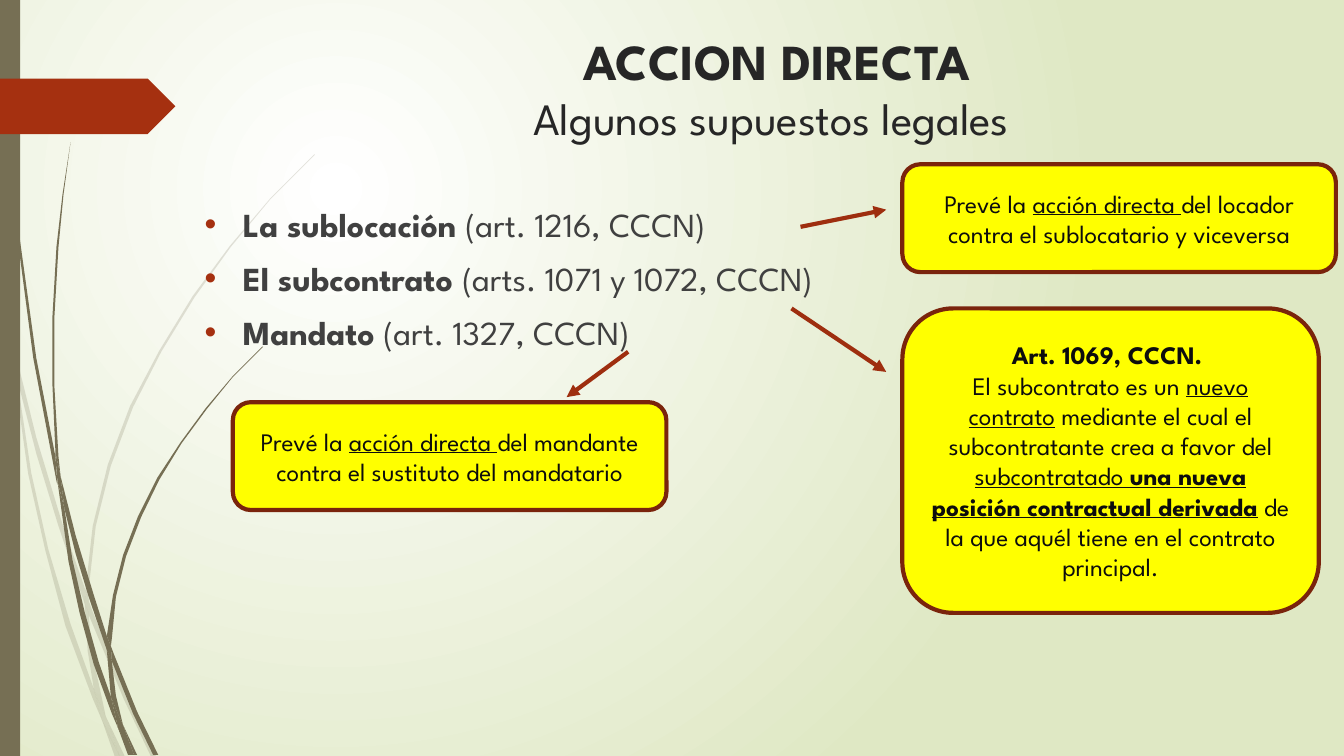
from dataclasses import dataclass

from lxml.etree import SubElement
from pptx import Presentation
from pptx.dml.color import RGBColor
from pptx.enum.shapes import MSO_CONNECTOR as Connector, MSO_SHAPE as Shape
from pptx.enum.text import MSO_ANCHOR as Anchor, PP_ALIGN as Align
from pptx.oxml.ns import qn
from pptx.util import Inches, Pt


@dataclass(frozen=True)
class Theme:
    font: str = "League Spartan"
    olive: str = "766F54"
    accent: str = "A53010"
    arrow: str = "9E2E0F"
    box_fill: str = "FFFF00"
    box_line: str = "7A240C"
    title: str = "262626"
    body: str = "404040"
    box_text: str = "0D0D0D"
    glow: str = "FFFFFF"
    backdrop: str = "DFE8C4"
    title_size: int = 36
    subtitle_size: int = 32
    body_size: int = 24
    box_size: int = 18
    stroke: int = 3


THEME = Theme()

# Outlines of the grass blades, in inches.
PALE_BLADES = [
    [(0.11, 3.5), (0.09, 3.22), (0, 2.82), (0, 2.99), (0.1, 3.44)],
    [(0.58, 5.22), (0.84, 5.99), (0.85, 5.86), (0.62, 5.2), (0.36, 4.34), (0.14, 3.45), (0.17, 3.76), (0.36, 4.5)],
    [(0.92, 6.07), (0.88, 5.96), (0.88, 6.1), (1.23, 6.94), (1.5, 7.51), (1.55, 7.51), (1.27, 6.92)],
    [(1.19, 7.51), (1.24, 7.51), (1.05, 7.11)],
    [(0.93, 6.83), (0.7, 6.19), (0.48, 5.45), (0.31, 4.69), (0.17, 3.76), (0.11, 3.5), (0.28, 4.7),
     (0.45, 5.46), (0.65, 6.21), (0.92, 6.93), (1.01, 7.14), (0.99, 7.07)],
    [(0.84, 5.99), (0.87, 6.46), (0.93, 6.83), (0.96, 6.92), (1.05, 7.11), (0.91, 6.46), (0.88, 6.1), (0.88, 6.08)],
    [(0.88, 5.84), (0.95, 5.22), (1.1, 4.62), (1.32, 4.04), (1.6, 3.49), (1.93, 2.95), (2.29, 2.45), (2.68, 1.98),
     (3.12, 1.54), (3.12, 1.53), (2.68, 1.97), (2.28, 2.44), (1.91, 2.94), (1.58, 3.48), (1.29, 4.03), (1.07, 4.61),
     (0.92, 5.22), (0.85, 5.84), (0.85, 5.86), (0.88, 5.96)],
    [(1.01, 7.14), (1.14, 7.51), (1.19, 7.51)],
    [(0.88, 6.08), (0.88, 6.1), (0.88, 5.96), (0.85, 5.86), (0.84, 5.99)],
    [(0.96, 6.92), (0.93, 6.83), (0.99, 7.07), (1.01, 7.14), (1.19, 7.51), (1.05, 7.11)],
]
DARK_BLADES = [
    [(0.07, 1.1), (0.17, 2.33), (0.33, 3.55), (0.56, 4.77), (0.57, 4.81), (0.55, 4.53), (0.36, 3.55), (0.19, 2.32),
     (0.08, 1.09), (0.05, 0.48), (0.04, 0), (0.03, 0), (0.04, 0.48)],
    [(0.88, 5.92), (1.06, 6.45), (1.06, 6.31), (0.93, 5.9), (0.75, 5.31), (0.6, 4.72), (0.64, 5.05), (0.75, 5.49)],
    [(1.13, 6.49), (1.1, 6.41), (1.11, 6.56), (1.32, 7.08), (1.52, 7.49), (1.57, 7.49), (1.36, 7.06)],
    [(1.1, 6.91), (0.98, 6.57), (0.84, 6.07), (0.72, 5.56), (0.64, 5.05), (0.57, 4.77), (0.68, 5.57),
     (0.79, 6.08), (0.93, 6.59), (1.11, 7.08), (1.17, 7.22), (1.16, 7.17)],
    [(0.6, 4.72), (0.58, 4.53), (0.54, 3.84), (0.54, 3.14), (0.58, 2.45), (0.63, 1.93), (0.7, 1.41), (0.62, 1.93),
     (0.56, 2.45), (0.52, 3.14), (0.52, 3.82), (0.55, 4.49)],
    [(1.33, 7.49), (1.36, 7.49), (1.22, 7.19)],
    [(0.57, 4.77), (0.64, 5.05), (0.6, 4.72), (0.55, 4.49), (0.55, 4.53)],
    [(1.11, 6.33), (1.15, 5.92), (1.25, 5.52), (1.4, 5.13), (1.58, 4.76), (1.8, 4.4), (2.05, 4.06), (2.31, 3.74),
     (2.61, 3.44), (2.6, 3.44), (2.31, 3.73), (2.04, 4.05), (1.79, 4.39), (1.56, 4.74), (1.37, 5.12), (1.22, 5.51),
     (1.12, 5.91), (1.06, 6.31), (1.1, 6.41)],
    [(1.17, 7.22), (1.27, 7.49), (1.31, 7.49)],
    [(1.06, 6.45), (1.1, 6.91), (1.16, 7.06), (1.22, 7.19), (1.15, 6.9), (1.11, 6.56), (1.09, 6.51)],
    [(1.06, 6.45), (1.11, 6.56), (1.1, 6.41), (1.06, 6.31)],
    [(1.16, 7.06), (1.1, 6.91), (1.16, 7.17), (1.17, 7.22), (1.3, 7.49), (1.33, 7.49), (1.22, 7.19)],
]


def rgb(code):
    return RGBColor.from_string(code)


def paint_background(slide):
    """Radial glow centred a quarter of the way in from the top left."""
    fill = slide.background.fill
    fill.gradient()
    for stop, color in zip(fill.gradient_stops, (THEME.glow, THEME.backdrop)):
        stop.color.rgb = rgb(color)
    gradient = slide.background._cSld.find(".//" + qn("a:gradFill"))
    gradient.remove(gradient.find(qn("a:lin")))
    circle = SubElement(gradient, qn("a:path"), path="circle")
    SubElement(circle, qn("a:fillToRect"), l="50000", t="50000", r="100000", b="100000")


def style_flat(shape, fill):
    shape.shadow.inherit = False
    shape.fill.solid()
    shape.fill.fore_color.rgb = rgb(fill)
    shape.line.fill.background()


def add_blade(slide, outline, opacity):
    builder = slide.shapes.build_freeform(*map(Inches, outline[0]))
    builder.add_line_segments([(Inches(x), Inches(y)) for x, y in outline[1:]])
    blade = builder.convert_to_shape()
    style_flat(blade, THEME.olive)
    if opacity < 100:
        color = blade._element.spPr.find(".//" + qn("a:srgbClr"))
        SubElement(color, qn("a:alpha"), val=str(opacity * 1000))


def add_block(slide, kind, bounds, fill):
    block = slide.shapes.add_shape(kind, *map(Inches, bounds))
    style_flat(block, fill)
    return block


def add_text_area(slide, bounds):
    frame = slide.shapes.add_textbox(*map(Inches, bounds)).text_frame
    frame.word_wrap = True
    return frame


def add_run(paragraph, text, size, color, marks=""):
    """Marks: b for bold, u for underlined."""
    run = paragraph.add_run()
    run.text = text
    run.font.name, run.font.size = THEME.font, Pt(size)
    run.font.color.rgb = rgb(color)
    run.font.bold, run.font.underline = "b" in marks, "u" in marks


def fill_paragraphs(frame, paragraphs, size, color, align):
    for index, pieces in enumerate(paragraphs):
        paragraph = frame.add_paragraph() if index else frame.paragraphs[0]
        paragraph.alignment = align
        for text, marks in pieces:
            add_run(paragraph, text, size, color, marks)


def add_title(slide, heading, subtitle):
    paragraph = add_text_area(slide, (2.83, 0.25, 9.75, 1.83)).paragraphs[0]
    paragraph.alignment = Align.CENTER
    add_run(paragraph, heading, THEME.title_size, THEME.title, "b")
    paragraph.add_line_break()
    add_run(paragraph, subtitle, THEME.subtitle_size, THEME.title)


def add_cases(slide, cases):
    frame = add_text_area(slide, (1.93, 1.97, 7.38, 5.28))
    fill_paragraphs(frame, cases, THEME.body_size, THEME.body, Align.LEFT)
    for paragraph in frame.paragraphs:
        paragraph.space_before = Pt(10)
        props = paragraph._p.get_or_add_pPr()
        props.set("marL", str(Inches(0.38)))
        props.set("indent", str(-Inches(0.38)))
        SubElement(SubElement(props, qn("a:buClr")), qn("a:srgbClr"), val=THEME.accent)
        SubElement(props, qn("a:buFont"), typeface="Arial")
        SubElement(props, qn("a:buChar"), char="•")


def add_callout(slide, bounds, paragraphs):
    box = add_block(slide, Shape.ROUNDED_RECTANGLE, bounds, THEME.box_fill)
    box.line.color.rgb, box.line.width = rgb(THEME.box_line), Pt(THEME.stroke)
    box.text_frame.word_wrap, box.text_frame.vertical_anchor = True, Anchor.MIDDLE
    fill_paragraphs(box.text_frame, paragraphs, THEME.box_size, THEME.box_text, Align.CENTER)


def add_arrow(slide, *ends):
    arrow = slide.shapes.add_connector(Connector.STRAIGHT, *map(Inches, ends))
    arrow.line.color.rgb, arrow.line.width = rgb(THEME.arrow), Pt(THEME.stroke)
    SubElement(arrow.line._get_or_add_ln(), qn("a:tailEnd"), type="triangle")
    SubElement(arrow._element.spPr, qn("a:effectLst"))


def main():
    deck = Presentation()
    deck.slide_width, deck.slide_height = Inches(13.33), Inches(7.5)
    slide = deck.slides.add_slide(deck.slide_layouts[6])
    paint_background(slide)
    for blades, opacity in ((PALE_BLADES, 20), (DARK_BLADES, 100)):
        for outline in blades:
            add_blade(slide, outline, opacity)
    add_block(slide, Shape.RECTANGLE, (0, 0, 0.2, 7.5), THEME.olive)
    add_block(slide, Shape.PENTAGON, (0, 0.78, 1.74, 0.55), THEME.accent)
    add_title(slide, "ACCION DIRECTA", "Algunos supuestos legales ")
    add_cases(slide, [[("La sublocación ", "b"), ("(art. 1216, CCCN)", "")],
                      [("El subcontrato ", "b"), ("(arts. 1071 y 1072, CCCN)", "")],
                      [("Mandato", "b"), (" (art. 1327, CCCN)", "")]])
    add_callout(slide, (8.95, 3.06, 4.13, 3.02), [
        [("Art. 1069, CCCN. ", "b")],
        [("El subcontrato es un ", ""), ("nuevo contrato", "u"), (" mediante el cual el", "")],
        [("subcontratante crea a favor del ", ""), ("subcontratado ", "u"),
         ("una nueva posición contractual derivada", "bu"),
         (" de la que aquél tiene en el contrato principal.", "")]])
    for left, top, rule in ((2.31, 3.99, "del mandante contra el sustituto del mandatario"),
                            (8.95, 1.63, "del locador contra el sublocatario y viceversa")):
        add_callout(slide, (left, top, 4.3, 1.07), [[("Prevé la ", ""), ("acción directa ", "u"), (rule, "")]])
    add_arrow(slide, 7.94, 2.25, 8.79, 2.08)
    add_arrow(slide, 7.85, 3.06, 8.79, 3.69)
    add_arrow(slide, 6.23, 3.49, 5.62, 3.94)
    deck.save("out.pptx")


if __name__ == "__main__":
    main()
